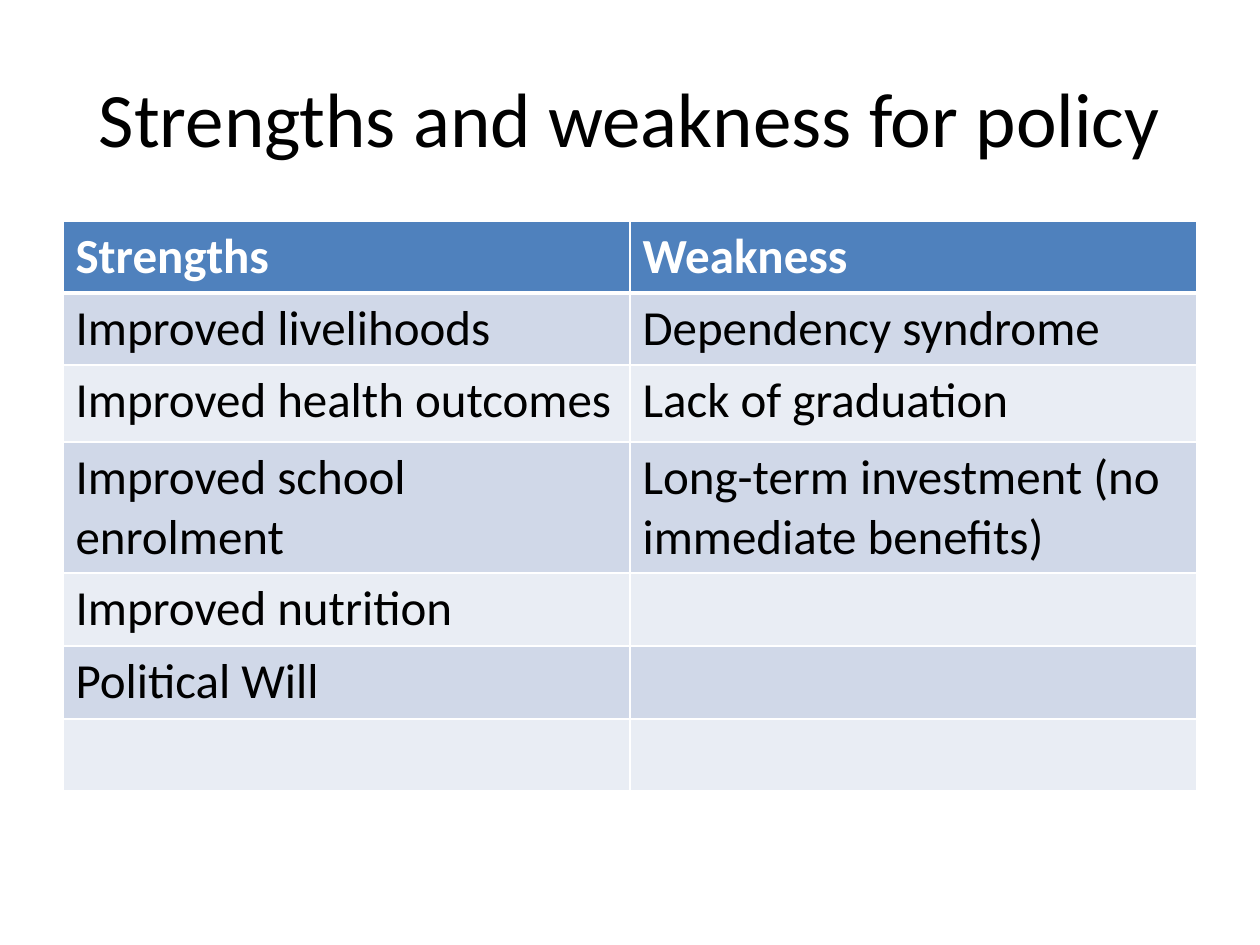
from dataclasses import dataclass

from lxml.etree import SubElement
from pptx import Presentation
from pptx.dml.color import RGBColor
from pptx.enum.text import MSO_ANCHOR, PP_ALIGN
from pptx.oxml.ns import qn
from pptx.util import Pt

EMU_PER_PX = 914400 / 126


@dataclass(frozen=True)
class Theme:
    """Colours, font and type sizes of the slide."""
    font: str = "Calibri"
    title_size: int = 44
    table_size: int = 28
    text: str = "000000"
    header_text: str = "FFFFFF"
    header_fill: str = "4F81BD"
    bands: tuple = ("D0D8E8", "E9EDF4")
    border: str = "FFFFFF"
    thin: int = 1
    thick: int = 3


THEME = Theme()
ROWS = [
    ("Strengths", "Weakness"),
    ("Improved livelihoods", "Dependency syndrome"),
    ("Improved health outcomes", "Lack of graduation"),
    ("Improved school enrolment", "Long-term investment (no immediate benefits)"),
    ("Improved nutrition", ""),
    ("Political Will", ""),
    ("", ""),
]
ROW_HEIGHTS = (72, 72, 77, 131, 73, 73, 72)


def px(length):
    """Turn pixels into EMU."""
    return round(length * EMU_PER_PX)


def style_runs(text_frame, size, color, bold=False):
    """Format every run of a text frame."""
    for paragraph in text_frame.paragraphs:
        for run in paragraph.runs:
            run.font.name = THEME.font
            run.font.size = Pt(size)
            run.font.bold = bold
            run.font.color.rgb = RGBColor.from_string(color)


def add_title(slide, text, left, top, width, height):
    """Add the centred slide title."""
    shape = slide.shapes.add_textbox(px(left), px(top), px(width), px(height))
    text_frame = shape.text_frame
    text_frame.word_wrap = True
    text_frame.vertical_anchor = MSO_ANCHOR.MIDDLE
    text_frame.text = text
    text_frame.paragraphs[0].alignment = PP_ALIGN.CENTER
    style_runs(text_frame, THEME.title_size, THEME.text)


def set_borders(cell, **widths):
    """Draw the cell borders, thin unless a width is given for a side."""
    properties = cell._tc.get_or_add_tcPr()
    for side in "LRTB":
        width = widths.get(side, THEME.thin)
        line = SubElement(properties, qn(f"a:ln{side}"), w=str(Pt(width)))
        fill = SubElement(line, qn("a:solidFill"))
        SubElement(fill, qn("a:srgbClr"), val=THEME.border)


def fill_cell(cell, text, row_index):
    """Write and format one cell as header or banded body."""
    header = row_index == 0
    edges = {0: {"B": THEME.thick}, 1: {"T": THEME.thick}}
    set_borders(cell, **edges.get(row_index, {}))
    cell.fill.solid()
    color = THEME.header_fill if header else THEME.bands[(row_index - 1) % 2]
    cell.fill.fore_color.rgb = RGBColor.from_string(color)
    cell.text_frame.text = text
    text_color = THEME.header_text if header else THEME.text
    style_runs(cell.text_frame, THEME.table_size, text_color, header)


def add_comparison_table(slide, rows, heights, left, top, width):
    """Add the table with equal columns and the given row heights."""
    shape = slide.shapes.add_table(
        len(rows), len(rows[0]), px(left), px(top), px(width), px(sum(heights)))
    table = shape.table
    for row_index, (texts, height) in enumerate(zip(rows, heights)):
        table.rows[row_index].height = px(height)
        for column_index, text in enumerate(texts):
            fill_cell(table.cell(row_index, column_index), text, row_index)


def main():
    """Build and save the slide."""
    presentation = Presentation()
    presentation.slide_width, presentation.slide_height = px(1260), px(945)
    slide = presentation.slides.add_slide(presentation.slide_layouts[6])
    add_title(slide, "Strengths and weakness for policy", 63, 38, 1134, 158)
    add_comparison_table(slide, ROWS, ROW_HEIGHTS, 63, 221, 1134)
    presentation.save("out.pptx")


if __name__ == "__main__":
    main()
